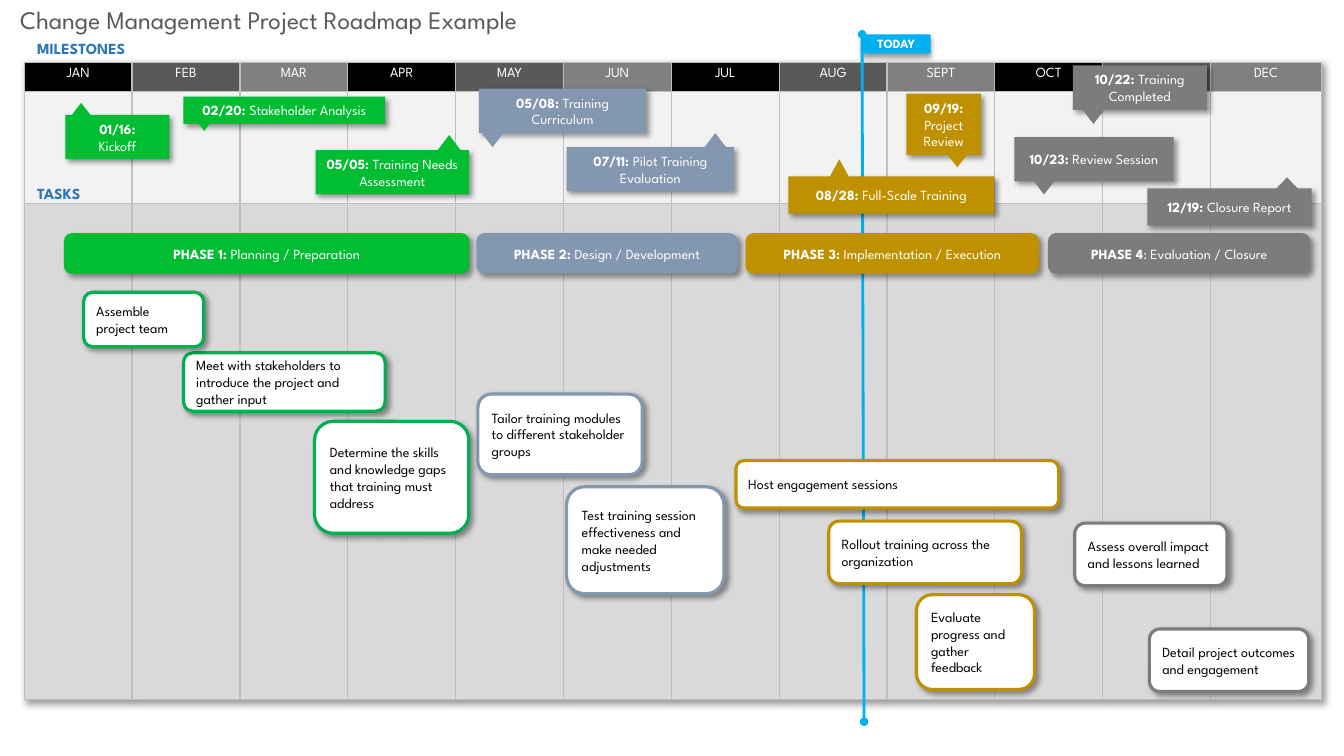
from itertools import cycle
from lxml.etree import SubElement
from pptx import Presentation
from pptx.dml.color import RGBColor
from pptx.enum.shapes import MSO_CONNECTOR, MSO_SHAPE
from pptx.enum.text import MSO_ANCHOR, MSO_AUTO_SIZE, PP_ALIGN
from pptx.oxml import parse_xml
from pptx.oxml.ns import nsdecls, qn
from pptx.util import Inches, Pt

FONT = "League Spartan"
GREEN, BLUE, GOLD, GRAY = "00BD32", "8497B0", "BF9000", "7C7C7C"
TASK_GREEN, TODAY_BLUE, HEADING_BLUE = "00B050", "00B0F0", "2E75B6"
WHITE, BLACK = "FFFFFF", "000000"

MONTHS = "JAN FEB MAR APR MAY JUN JUL AUG SEPT OCT NOV DEC".split()
MONTH_FILLS = ("000000", "595959", "808080")
ROWS = ((0.29, None), (1.11, "F2F2F2"), (4.92, "D9D9D9"))

PHASES = [  # left, width, colour, bold text, plain text
    (0.65, 3.99, GREEN, "PHASE 1: ", "Planning / Preparation"),
    (4.74, 2.56, BLUE, "PHASE 2: ", "Design / Development"),
    (7.41, 2.88, GOLD, "PHASE 3: ", "Implementation / Execution"),
    (10.41, 2.57, GRAY, "PHASE 4", ": Evaluation / Closure"),
]
UP, DOWN = "up", "down"
MILESTONES = [  # box, colour, date, name, pointer: side, offset, reach, width, height
    ((3.13, 1.49, 1.52, 0.44), GREEN, "05/05: ", "Training Needs Assessment", (UP, 1.21, 0.15, 0.23, 0.15)),
    ((0.65, 1.14, 1.03, 0.44), GREEN, "01/16:", "\nKickoff", (UP, 0.04, 0.12, 0.23, 0.15)),
    ((1.82, 0.96, 2, 0.27), GREEN, "02/20: ", "Stakeholder Analysis", (DOWN, 0.09, 0.07, 0.23, 0.15)),
    ((4.75, 0.88, 1.66, 0.44), BLUE, "05/08: ", "Training Curriculum", (DOWN, 0.02, 0.14, 0.23, 0.15)),
    ((5.62, 1.46, 1.66, 0.44), BLUE, "07/11: ", "Pilot Training Evaluation", (UP, 1.36, 0.14, 0.23, 0.15)),
    ((8.99, 0.93, 0.74, 0.61), GOLD, "09/19: ", "Project Review", (DOWN, 0.39, 0.12, 0.23, 0.15)),
    ((7.82, 1.75, 2.04, 0.37), GOLD, "08/28: ", "Full-Scale Training", (UP, 0.39, 0.17, 0.23, 0.21)),
    ((10.64, 0.65, 1.33, 0.44), GRAY, "10/22: ", "Training Completed", (DOWN, 0.09, 0.14, 0.23, 0.15)),
    ((10.06, 1.36, 1.58, 0.44), GRAY, "10/23: ", "Review Session", (DOWN, 0.18, 0.13, 0.23, 0.15)),
    ((11.38, 1.87, 1.63, 0.37), GRAY, "12/19: ", "Closure Report", (UP, 1.26, 0.11, 0.25, 0.13)),
]
TASKS = [
    ((1.82, 3.5, 2, 0.58), TASK_GREEN, "Meet with stakeholders to introduce the project and gather input"),
    ((5.62, 4.83, 1.56, 1.06), BLUE, "Test training session effectiveness and make needed adjustments"),
    ((8.22, 5.17, 1.91, 0.62), GOLD, "Rollout training across the organization"),
    ((11.4, 6.24, 1.58, 0.62), GRAY, "Detail project outcomes and engagement"),
    ((0.83, 2.9, 1.19, 0.54), TASK_GREEN, "Assemble project team"),
    ((4.74, 3.91, 1.63, 0.8), BLUE, "Tailor training modules to different stakeholder groups"),
    ((7.3, 4.57, 3.2, 0.47), GOLD, "Host engagement sessions"),
    ((10.66, 5.19, 1.51, 0.62), GRAY, "Assess overall impact and lessons learned"),
    ((9.09, 5.9, 1.17, 0.94), GOLD, "Evaluate progress and gather feedback"),
    ((3.12, 4.18, 1.53, 1.11), TASK_GREEN, "Determine the skills and knowledge gaps that training must address"),
]


def color(value):
    return RGBColor.from_string(value)


def lengths(box):
    return [Inches(value) for value in box]


def set_values(target, values):
    for name, value in values.items():
        setattr(target, name, value)


def write(frame, spans, size=10, ink=WHITE, align=PP_ALIGN.CENTER, anchor=MSO_ANCHOR.MIDDLE):
    """Fill a text frame with (text, bold) spans; a leading newline starts a paragraph."""
    set_values(frame, {"word_wrap": True, "vertical_anchor": anchor})
    para = frame.paragraphs[0]
    para.alignment = align
    for text, bold in spans:
        if text.startswith("\n"):
            para = frame.add_paragraph()
            para.alignment = align
        span = para.add_run()
        span.text = text.strip("\n")
        set_values(span.font, {"name": FONT, "size": Pt(size), "bold": bold})
        span.font.color.rgb = color(ink)


def add_shadow(properties, angle=45, index=None):
    effects = parse_xml(
        f'<a:effectLst {nsdecls("a")}><a:outerShdw blurRad="{Pt(4)}" dist="{Pt(3)}" '
        f'dir="{angle * 60000}" algn="tl" rotWithShape="0"><a:srgbClr val="000000">'
        '<a:alpha val="40000"/></a:srgbClr></a:outerShdw></a:effectLst>')
    properties.insert(len(properties) if index is None else index, effects)


def add_block(shapes, kind, box, fill, outline=None, angle=45):
    """Add a filled shape; no angle means no shadow."""
    block = shapes.add_shape(kind, *lengths(box))
    block.fill.solid()
    block.fill.fore_color.rgb = color(fill)
    if outline:
        block.line.color.rgb = color(outline)
        block.line.width = Pt(2.25)
    else:
        block.line.fill.background()
    if angle is None:
        block.shadow.inherit = False
    else:
        add_shadow(block._element.spPr, angle)
    return block


def add_title(page, box):
    title = page.shapes.title
    set_values(title, dict(zip(("left", "top", "width", "height"), lengths(box))))
    write(title.text_frame, [("Change Management Project Roadmap Example", False)],
          18, "595959", PP_ALIGN.LEFT, MSO_ANCHOR.TOP)
    title.text_frame.auto_size = MSO_AUTO_SIZE.NONE


def style_cell(cell, fill):
    properties = cell._tc.get_or_add_tcPr()
    for side in ("lnL", "lnR", "lnT", "lnB"):
        border = SubElement(properties, qn(f"a:{side}"), w=str(Pt(1)))
        SubElement(SubElement(border, qn("a:solidFill")), qn("a:srgbClr"), val="BFBFBF")
    cell.fill.solid()
    cell.fill.fore_color.rgb = color(fill)


def add_calendar(page, box):
    table = page.shapes.add_table(len(ROWS), len(MONTHS), *lengths(box)).table
    add_shadow(table._tbl.tblPr, index=0)
    month_width = 1.07
    for column in table.columns:
        column.width = Inches(month_width)
    table.columns[len(MONTHS) - 1].width = Inches(box[2] - month_width * (len(MONTHS) - 1))
    for row, (height, fill) in enumerate(ROWS):
        table.rows[row].height = Inches(height)
        for column, month_fill in zip(range(len(MONTHS)), cycle(MONTH_FILLS)):
            style_cell(table.cell(row, column), fill or month_fill)
    for column, month in enumerate(MONTHS):
        cell = table.cell(0, column)
        write(cell.text_frame, [(month, False)], anchor=MSO_ANCHOR.TOP)


def add_today_marker(page, box):
    left, top, width, height = box
    shapes = page.shapes.add_group_shape().shapes
    flag = add_block(shapes, MSO_SHAPE.RECTANGLE, (left, top, 0.68, 0.19), TODAY_BLUE, angle=90)
    write(flag.text_frame, [("TODAY", True)], 9)
    line = shapes.add_connector(MSO_CONNECTOR.STRAIGHT,
                                *lengths((left, top, left + width, top + height)))
    line.line.color.rgb = color(TODAY_BLUE)
    line.line.width = Pt(2)
    for end in ("headEnd", "tailEnd"):
        SubElement(line.line._get_or_add_ln(), qn(f"a:{end}"), type="oval")
    SubElement(line._element.spPr, qn("a:effectLst"))


def add_heading(page, box, text):
    heading = page.shapes.add_textbox(*lengths(box))
    write(heading.text_frame, [(text, True)], 11, HEADING_BLUE, PP_ALIGN.LEFT, MSO_ANCHOR.TOP)


def add_phase(page, box, fill, label, name):
    bar = add_block(page.shapes, MSO_SHAPE.ROUNDED_RECTANGLE, box, fill, fill)
    write(bar.text_frame, [(label, True), (name, False)])


def add_milestone(page, box, fill, date, name, pointer):
    left, top, width, height = box
    side, offset, reach, base, rise = pointer
    shapes = page.shapes.add_group_shape().shapes
    callout = add_block(shapes, MSO_SHAPE.RECTANGLE, box, fill)
    frame = callout.text_frame
    set_values(frame, {"margin_left": Inches(0.08), "margin_right": Inches(0.08)})
    write(frame, [(date, True), (name, False)])
    tip_top = top - reach if side == UP else top + height + reach - rise
    tip = add_block(shapes, MSO_SHAPE.ISOSCELES_TRIANGLE,
                    (left + offset, tip_top, base, rise), fill, angle=None)
    tip.rotation = 0 if side == UP else 180


def add_task(page, box, outline, text):
    card = add_block(page.shapes, MSO_SHAPE.ROUNDED_RECTANGLE, box, WHITE, outline)
    write(card.text_frame, [(text, False)], ink=BLACK, align=PP_ALIGN.LEFT)


def main():
    deck = Presentation()
    deck.slide_width, deck.slide_height = lengths((13.33, 7.5))
    page = deck.slides.add_slide(deck.slide_layouts[5])
    add_title(page, (0.1, -0.01, 9.26, 0.4))
    add_calendar(page, (0.24, 0.62, 12.87, 6.32))
    add_today_marker(page, (8.55, 0.34, 0.02, 6.82))
    for left, width, fill, label, name in PHASES:
        add_phase(page, (left, 2.33, width, 0.37), fill, label, name)
    for top, text in ((0.34, "MILESTONES"), (1.78, "TASKS")):
        add_heading(page, (0.27, top, 1.33, 0.29), text)
    for milestone in MILESTONES:
        add_milestone(page, *milestone)
    for task in TASKS:
        add_task(page, *task)
    deck.save("out.pptx")


if __name__ == "__main__":
    main()
